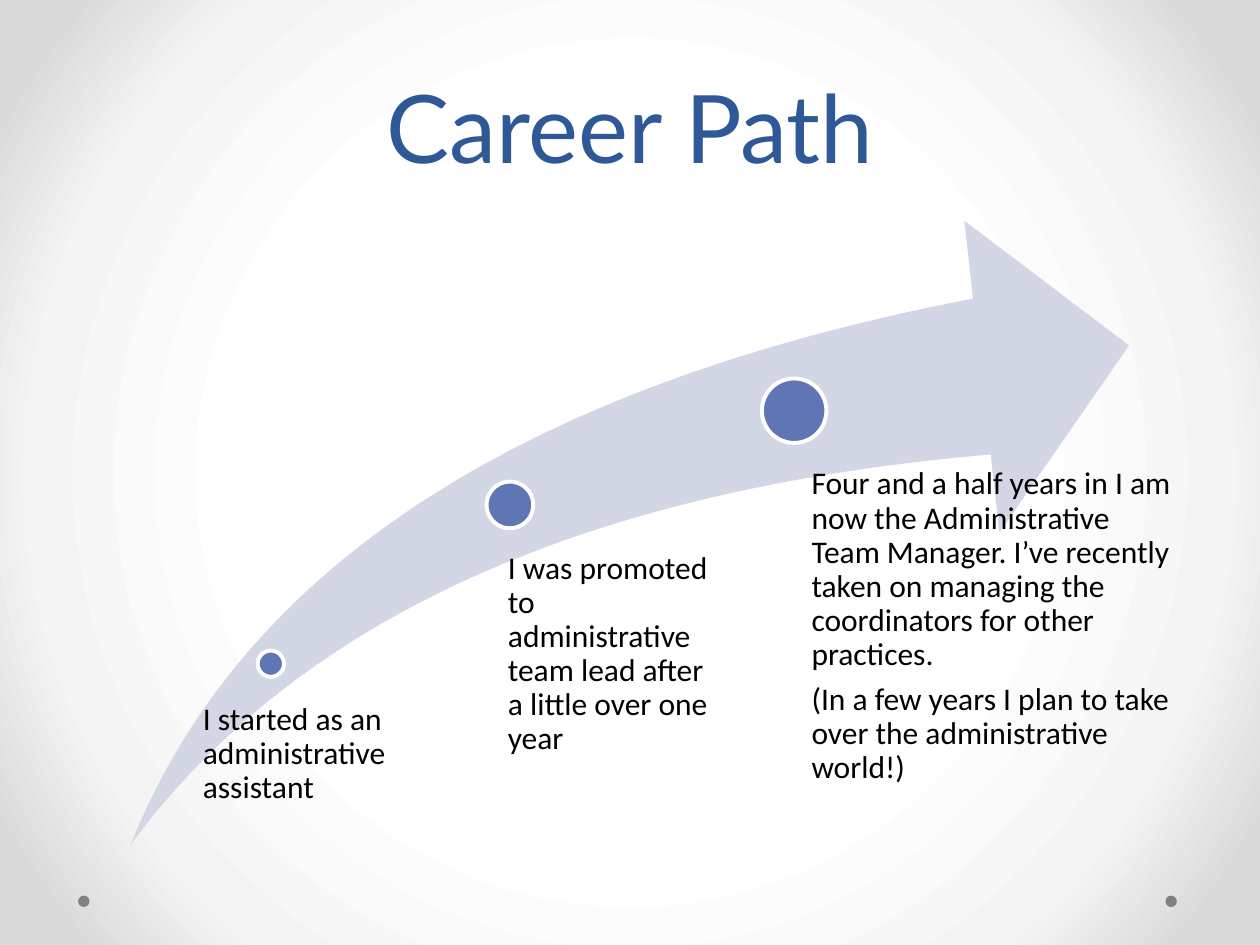
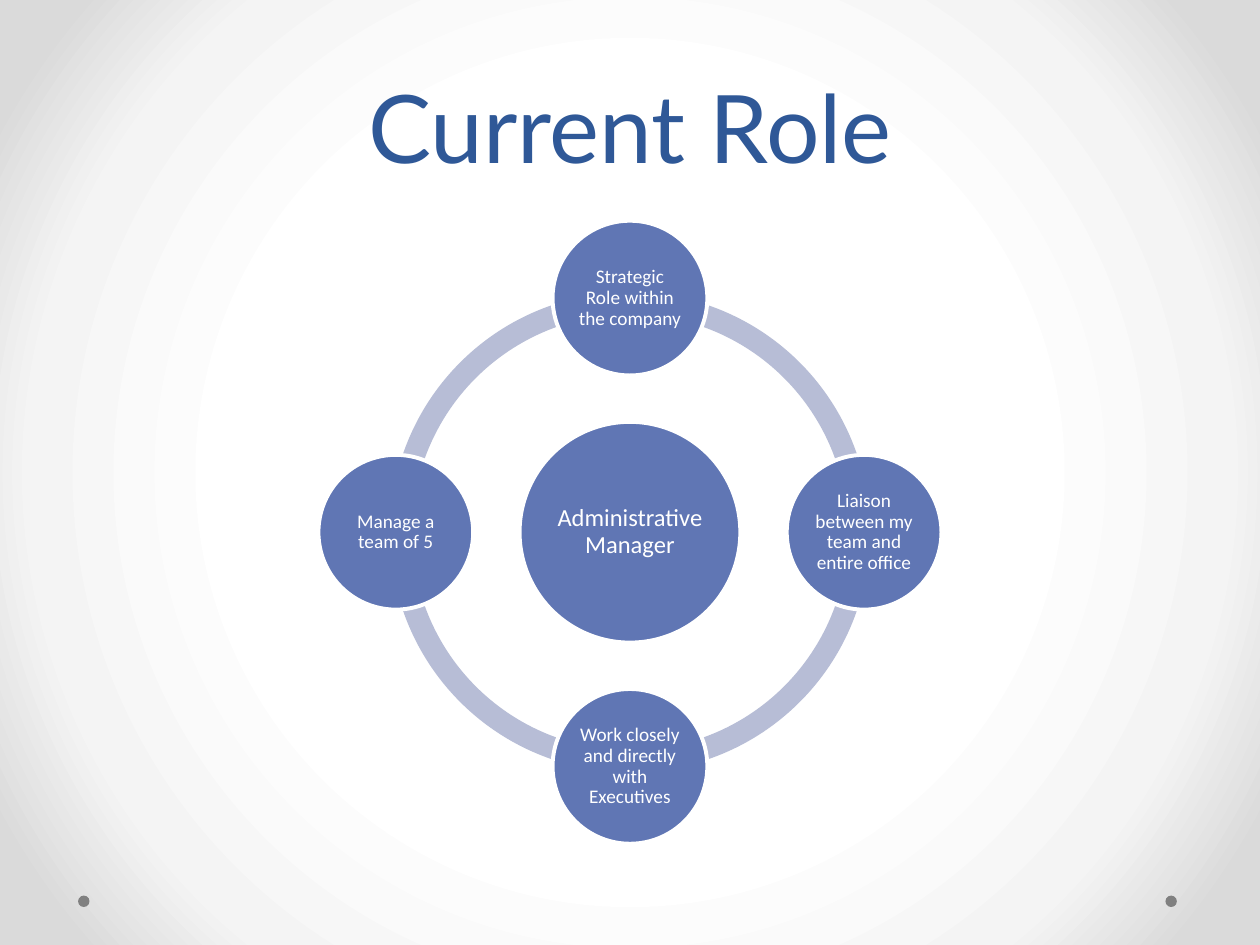
from lxml import etree
from pptx import Presentation
from pptx.dml.color import RGBColor
from pptx.enum.shapes import MSO_SHAPE
from pptx.enum.text import MSO_ANCHOR, PP_ALIGN
from pptx.oxml.ns import qn
from pptx.util import Cm, Pt

OVAL = MSO_SHAPE.OVAL
ARC = MSO_SHAPE.BLOCK_ARC
SWOOSH = MSO_SHAPE.SWOOSH_ARROW
LEFT, CENTER = PP_ALIGN.LEFT, PP_ALIGN.CENTER
TOP, MIDDLE, BOTTOM = MSO_ANCHOR.TOP, MSO_ANCHOR.MIDDLE, MSO_ANCHOR.BOTTOM

COLORS = {
    "title": "2F5897",
    "blue": "6076B4",
    "swoosh": "D2D6E5",
    "ring": "B7BDD6",
    "gray": "808080",
    "white": "FFFFFF",
    "black": "000000",
}
GLOW = [(50, "FFFFFF"), (76, "F4F4F4"), (92, "DADADA")]
WIDTH, HEIGHT = 25.4, 19.05


class Deck:
    """Holds the style and the current slide; all lengths are in cm."""

    def __init__(self):
        self.prs = Presentation()
        self.prs.slide_width, self.prs.slide_height = Cm(WIDTH), Cm(HEIGHT)
        self.slide = None
        self.glow()

    def color(self, name):
        return RGBColor.from_string(COLORS[name])

    def glow(self):
        """Give the master a round gradient background."""
        master = self.prs.slide_master
        master.background.fill.gradient()
        grad = master.element.find(".//" + qn("a:gradFill"))
        for child in list(grad):
            grad.remove(child)
        stops = etree.SubElement(grad, qn("a:gsLst"))
        for pos, tone in GLOW:
            stop = etree.SubElement(stops, qn("a:gs"), pos=str(pos * 1000))
            etree.SubElement(stop, qn("a:srgbClr"), val=tone)
        shade = etree.SubElement(grad, qn("a:path"))
        shade.set("path", "circle")
        etree.SubElement(shade, qn("a:fillToRect"),
                         dict.fromkeys("ltrb", "50000"))

    def start(self, title):
        """Add a slide with its corner dots and title."""
        self.slide = self.prs.slides.add_slide(self.prs.slide_layouts[6])
        for x in (1.69, 23.61):
            self.disc(x, 18.17, 0.23, "gray", rim=False)
        box = self.text(1.27, 0.43, 22.86, 3.38)
        self.label(box.text_frame, [title], 54, "title", "Lato",
                   CENTER, BOTTOM, Pt(58))

    def shape(self, kind, x, y, w, h, fill, adjust=()):
        shape = self.slide.shapes.add_shape(kind, Cm(x), Cm(y), Cm(w), Cm(h))
        shape.shadow.inherit = False
        shape.fill.solid()
        shape.fill.fore_color.rgb = self.color(fill)
        shape.line.fill.background()
        for i, value in enumerate(adjust):
            shape.adjustments[i] = value
        return shape

    def disc(self, x, y, size, fill="blue", rim=True):
        """Draw a circle around the centre x, y."""
        disc = self.shape(OVAL, x - size / 2, y - size / 2, size, size, fill)
        if rim:
            disc.line.color.rgb = self.color("white")
            disc.line.width = Pt(2.25)
        return disc

    def text(self, x, y, w, h):
        return self.slide.shapes.add_textbox(Cm(x), Cm(y), Cm(w), Cm(h))

    def label(self, frame, lines, size, color, font="Calibri",
              align=LEFT, anchor=TOP, pitch=0.9, after=0, pads=None):
        frame.word_wrap = True
        frame.vertical_anchor = anchor
        if pads:
            (frame.margin_left, frame.margin_top,
             frame.margin_right, frame.margin_bottom) = map(Cm, pads)
        frame.text = "\n".join(lines)
        for para in frame.paragraphs:
            para.alignment = align
            para.line_spacing = pitch
            para.space_after = Pt(after)
            for run in para.runs:
                run.font.size = Pt(size)
                run.font.name = font
                run.font.color.rgb = self.color(color)

    def step(self, dot, box, pad, lines):
        """Mark a point on the path and tell its story below."""
        self.disc(*dot)
        self.label(self.text(*box).text_frame, lines, 18, "black",
                   after=6.3, pads=(pad, 0, 0, 0))

    def node(self, x, y, size, words, points):
        disc = self.disc(x, y, size)
        self.label(disc.text_frame, [words], points, "white",
                   align=CENTER, anchor=MIDDLE, pads=[0.05] * 4)


def career(deck):
    deck.start("Career Path")
    deck.shape(SWOOSH, 2.64, 4.45, 20.12, 12.57, "swoosh", (0.25, 0.25))
    # Steps: dot (x, y, size), text box, left inset, paragraphs
    steps = [
        ((5.46, 13.38, 0.53), (3.81, 14.17, 4.27, 2.46), 0.28,
         ["I started as an administrative assistant"]),
        ((10.28, 10.18, 0.94), (9.73, 11.13, 4.83, 5.7), 0.51,
         ["I was promoted to administrative team lead after "
          "a little over one year"]),
        ((16.01, 8.28, 1.3), (15.67, 9.43, 8, 6.93), 0.69,
         ["Four and a half years in I am now the Administrative Team "
          "Manager. I’ve recently taken on managing the coordinators "
          "for other practices.",
          "(In a few years I plan to take over the administrative world!)"]),
    ]
    for step in steps:
        deck.step(*step)


def role(deck):
    deck.start("Current Role")
    x, y, ring, reach = WIDTH / 2, 10.73, 9.68, 4.72
    # Ring of four quarter arcs; 54 units make a quarter turn
    for turn in range(4):
        ends = (turn * 54, (turn + 1) % 4 * 54, 0.046)
        deck.shape(ARC, x - ring / 2, y - ring / 2, ring, ring, "ring", ends)
    # Hub and its four duties
    deck.node(x, y, 4.45, "Administrative Manager", 14)
    duties = [
        (0, -1, "Strategic Role within the company"),
        (1, 0, "Liaison between my team and entire office"),
        (0, 1, "Work closely and directly with Executives"),
        (-1, 0, "Manage a team of 5"),
    ]
    for dx, dy, words in duties:
        deck.node(x + dx * reach, y + dy * reach, 3.12, words, 11)


def main():
    deck = Deck()
    career(deck)
    role(deck)
    deck.prs.save("out.pptx")


if __name__ == "__main__":
    main()
